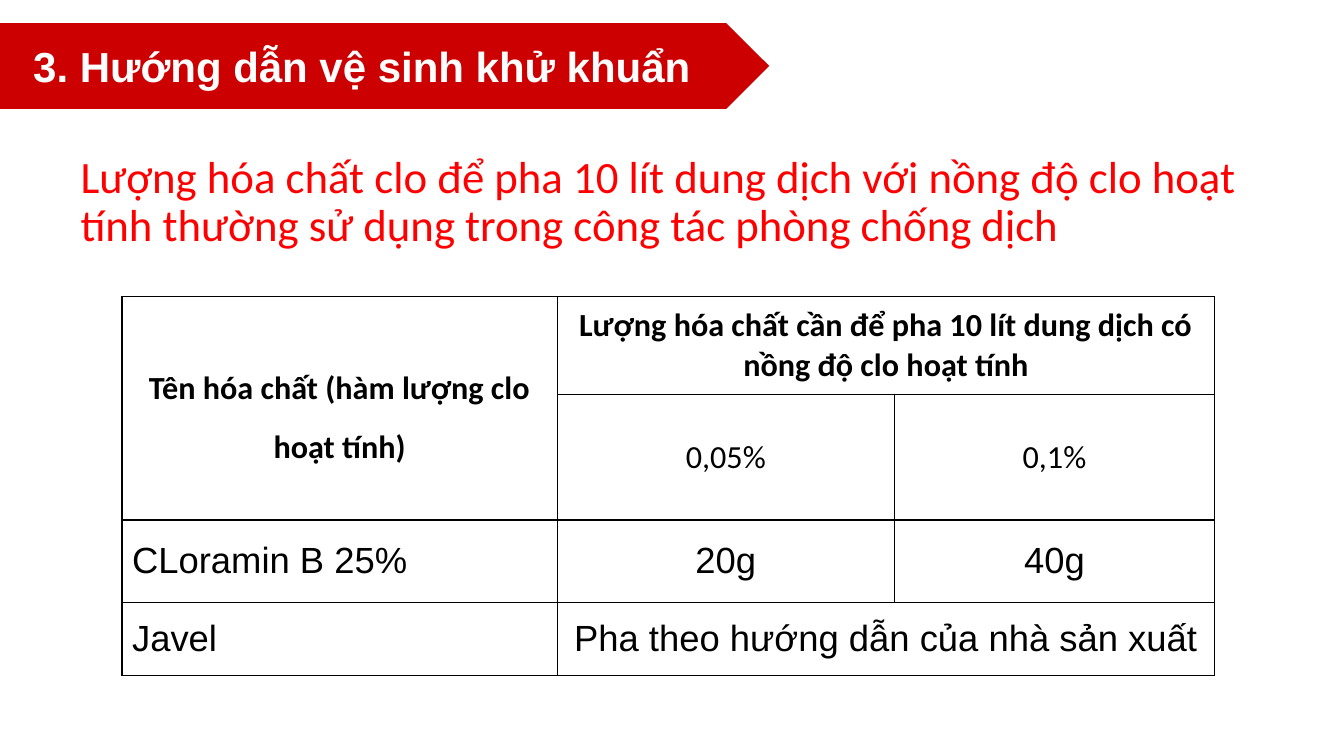
from dataclasses import dataclass

import pptx
import pptx.dml.color
import pptx.enum.shapes
import pptx.enum.text
import pptx.oxml
import pptx.oxml.ns
import pptx.util

ALIGN = pptx.enum.text.PP_ALIGN
MIDDLE = pptx.enum.text.MSO_ANCHOR.MIDDLE
EMU_PER_PX = 9144  # 100 px to the inch


@dataclass(frozen=True)
class Theme:
    banner: str = "CC0000"
    banner_text: str = "FEFEFE"
    heading: str = "FF0000"
    ink: str = "000000"
    heading_font: str = "Calibri"
    body_font: str = "Arial"
    heading_size: int = 32
    banner_size: int = 30
    body_size: int = 26
    header_size: int = 23
    border_width: int = 1


def px(length):
    return pptx.util.Emu(length * EMU_PER_PX)


def rgb(color):
    return pptx.dml.color.RGBColor.from_string(color)


def write_text(frame, text, *, size, font, color, bold=False, align=ALIGN.LEFT, spacing=1.0):
    paragraph = frame.paragraphs[0]
    paragraph.alignment = align
    paragraph.line_spacing = spacing
    run = paragraph.add_run()
    run.text = text
    run.font.size = pptx.util.Pt(size)
    run.font.name = font
    run.font.bold = bold
    run.font.color.rgb = rgb(color)


def draw_borders(cell, color, width):
    properties = cell._tc.get_or_add_tcPr()
    for side in ("lnL", "lnR", "lnT", "lnB"):
        properties.append(pptx.oxml.parse_xml(
            f'<a:{side} {pptx.oxml.ns.nsdecls("a")} w="{pptx.util.Pt(width)}">'
            f'<a:solidFill><a:srgbClr val="{color}"/></a:solidFill></a:{side}>'
        ))


class SlideBuilder:
    def __init__(self, slide, theme):
        self.slide = slide
        self.theme = theme

    def banner(self, text, left, top, width, height, inset):
        shape = self.slide.shapes.add_shape(
            pptx.enum.shapes.MSO_SHAPE.PENTAGON, *map(px, (left, top, width, height)))
        shape.shadow.inherit = False
        shape.fill.solid()
        shape.fill.fore_color.rgb = rgb(self.theme.banner)
        shape.line.fill.background()
        frame = shape.text_frame
        frame.margin_left = px(inset)
        frame.vertical_anchor = MIDDLE
        write_text(frame, text, size=self.theme.banner_size, font=self.theme.body_font,
                   color=self.theme.banner_text, bold=True)

    def heading(self, text, left, top, width, height):
        box = self.slide.shapes.add_textbox(*map(px, (left, top, width, height)))
        frame = box.text_frame
        frame.word_wrap = True
        frame.vertical_anchor = MIDDLE
        write_text(frame, text, size=self.theme.heading_size, font=self.theme.heading_font,
                   color=self.theme.heading, spacing=0.9)

    def table(self, rows, left, top, column_widths, row_heights, merges, formats):
        """Fill a bordered table; formats maps (row, column) to text keywords."""
        table = self.slide.shapes.add_table(
            len(row_heights), len(column_widths), px(left), px(top),
            px(sum(column_widths)), px(sum(row_heights))).table
        table.first_row = table.horz_banding = False
        for column, width in zip(table.columns, column_widths):
            column.width = px(width)
        for row, height in zip(table.rows, row_heights):
            row.height = px(height)
        for start, end in merges:
            table.cell(*start).merge(table.cell(*end))
        for row_index, row in enumerate(rows):
            for column_index, text in enumerate(row):
                cell = table.cell(row_index, column_index)
                draw_borders(cell, self.theme.ink, self.theme.border_width)
                cell.fill.background()
                cell.vertical_anchor = MIDDLE
                if text:
                    write_text(cell.text_frame, text, color=self.theme.ink,
                               **formats(row_index, column_index))


def main():
    presentation = pptx.Presentation()
    presentation.slide_width, presentation.slide_height = px(1333), px(750)
    slide = presentation.slides.add_slide(presentation.slide_layouts[6])
    theme = Theme()
    builder = SlideBuilder(slide, theme)

    def dosage_format(row, column):
        is_header = row < 2
        is_name = column == 0
        return {
            "size": theme.header_size if is_header else theme.body_size,
            "font": theme.heading_font if is_header else theme.body_font,
            "bold": row == 0,
            "align": ALIGN.CENTER if is_header or not is_name else ALIGN.LEFT,
            "spacing": 1.5 if is_header and is_name else 1.0,
        }

    builder.banner("3. Hướng dẫn vệ sinh khử khuẩn", 0, 23, 763, 85, inset=33)
    builder.heading(
        "Lượng hóa chất clo để pha 10 lít dung dịch với nồng độ clo hoạt tính "
        "thường sử dụng trong công tác phòng chống dịch", 70, 129, 1188, 145)
    builder.table(
        [
            ["Tên hóa chất (hàm lượng clo hoạt tính)",
             "Lượng hóa chất cần để pha 10 lít dung dịch có nồng độ clo hoạt tính", ""],
            ["", "0,05%", "0,1%"],
            ["CLoramin B 25%", "20g", "40g"],
            ["Javel", "Pha theo hướng dẫn của nhà sản xuất", ""],
        ],
        121, 294,
        column_widths=[432, 334, 318],
        row_heights=[97, 61, 82, 72],
        merges=[((0, 0), (1, 0)), ((0, 1), (0, 2)), ((3, 1), (3, 2))],
        formats=dosage_format,
    )
    presentation.save("out.pptx")


if __name__ == "__main__":
    main()
